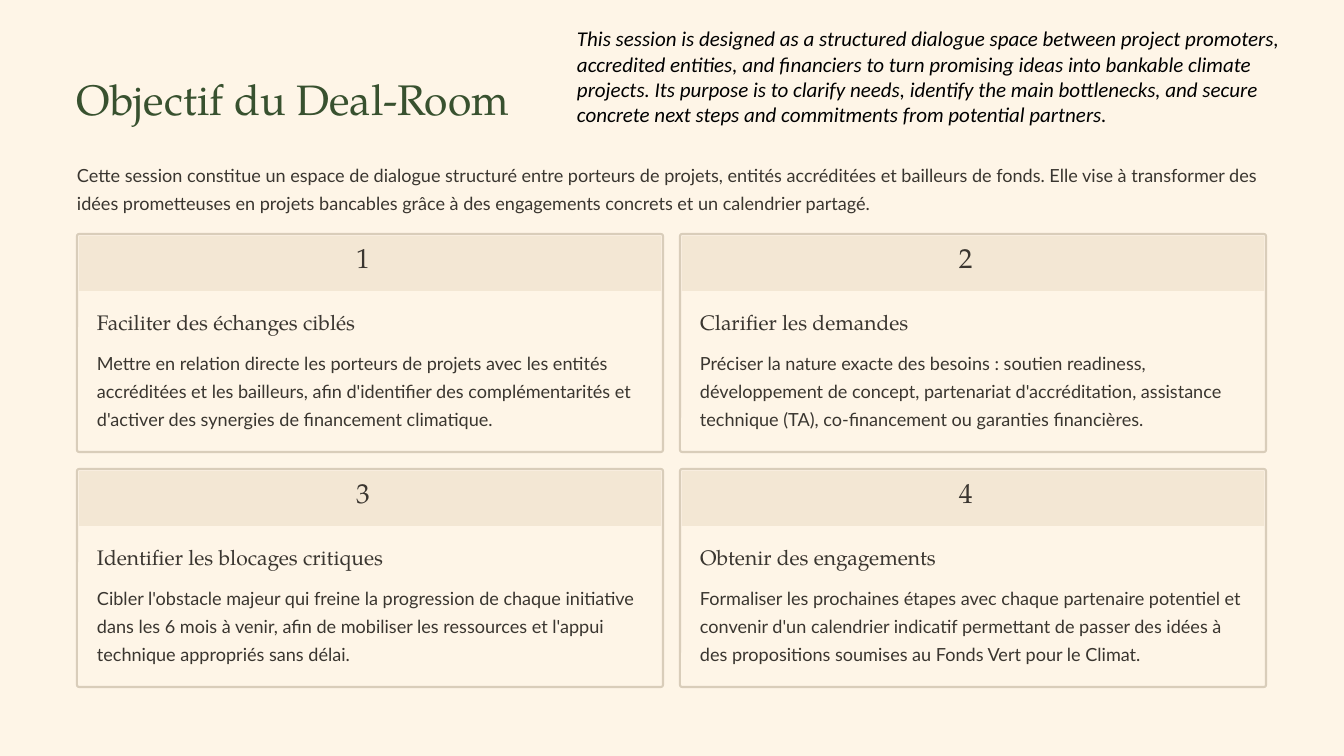
"""Build the slide that presents the aims of the Deal-Room."""
from dataclasses import dataclass

from pptx import Presentation, util as u
from pptx.dml.color import RGBColor
from pptx.enum import shapes, text

TITLE = "Objectif du Deal‑Room"
NOTE = (
    "This session is designed as a structured dialogue space between project promoters, "
    "accredited entities, and financiers to turn promising ideas into bankable climate "
    "projects. Its purpose is to clarify needs, identify the main bottlenecks, and secure "
    "concrete next steps and commitments from potential partners."
)
INTRO = (
    "Cette session constitue un espace de dialogue structuré entre porteurs de projets, "
    "entités accréditées et bailleurs de fonds. Elle vise à transformer des idées "
    "prometteuses en projets bancables grâce à des engagements concrets et un calendrier partagé."
)
CARDS = [
    ("Faciliter des échanges ciblés",
     "Mettre en relation directe les porteurs de projets avec les entités accréditées et les "
     "bailleurs, afin d'identifier des complémentarités et d'activer des synergies de "
     "financement climatique."),
    ("Clarifier les demandes",
     "Préciser la nature exacte des besoins : soutien readiness, développement de concept, "
     "partenariat d'accréditation, assistance technique (TA), co-financement ou garanties "
     "financières."),
    ("Identifier les blocages critiques",
     "Cibler l'obstacle majeur qui freine la progression de chaque initiative dans les 6 mois "
     "à venir, afin de mobiliser les ressources et l'appui technique appropriés sans délai."),
    ("Obtenir des engagements",
     "Formaliser les prochaines étapes avec chaque partenaire potentiel et convenir d'un "
     "calendrier indicatif permettant de passer des idées à des propositions soumises au "
     "Fonds Vert pour le Climat."),
]


@dataclass(frozen=True)
class Style:
    """Font, size, colour, line spacing in points and slant of a text."""
    font: str
    size: float
    color: str
    leading: float = 0
    italic: bool = False


class Theme:
    """Colours and type styles of the slide."""
    paper, band, border = "FEF5E7", "F3E7D4", "D9CDBA"
    ink = "3A3630"
    serif = "TeX Gyre Pagella"
    title = Style(serif, 36.5, "38512F", 46)
    number = Style(serif, 23.5, ink, 23.5)
    heading = Style(serif, 18, ink, 23)
    body = Style("Lato", 15.5, ink, 24)
    note = Style("Calibri", 18, "000000", italic=True)


PX = u.Inches(1) / 84
LEFT, TOP = 77, 234
CARD_W, CARD_H = 586, 218
GAP = 17
COLUMNS = 2


def px(*lengths):
    return [u.Emu(round(n * PX)) for n in lengths]


def add_text(s, box, content, style, wrap=True, inset=(0, 0)):
    tf = s.shapes.add_textbox(*px(*box)).text_frame
    tf.word_wrap = wrap
    tf.auto_size = text.MSO_AUTO_SIZE.NONE
    tf.margin_left, tf.margin_top = tf.margin_right, tf.margin_bottom = px(*inset)
    tf.text = content
    p = tf.paragraphs[0]
    if style.leading:
        p.line_spacing = u.Pt(style.leading)
    font = p.runs[0].font
    font.name, font.size, font.italic = style.font, u.Pt(style.size), style.italic
    font.color.rgb = RGBColor.from_string(style.color)


def add_panel(s, box, fill, radius, border=None):
    sp = s.shapes.add_shape(shapes.MSO_SHAPE.ROUNDED_RECTANGLE, *px(*box))
    sp.shadow.inherit = False
    sp.adjustments[0] = radius
    sp.fill.solid()
    sp.fill.fore_color.rgb = RGBColor.from_string(fill)
    if border:
        sp.line.color.rgb = RGBColor.from_string(border)
        sp.line.width = u.Pt(1.8)
    else:
        sp.line.fill.background()


def add_card(s, index, heading, body):
    row, col = divmod(index, COLUMNS)
    x, y = LEFT + col * (CARD_W + GAP), TOP + row * (CARD_H + GAP)
    add_panel(s, (x, y, CARD_W, CARD_H), Theme.paper, 0.01, Theme.border)
    add_panel(s, (x + 2, y + 2, CARD_W - 4, 55), Theme.band, 0)
    add_text(s, (x + 279, y + 13, 28, 34), str(index + 1), Theme.number, wrap=False)
    add_text(s, (x + 20, y + 74, 313, 27), heading, Theme.heading, wrap=False)
    add_text(s, (x + 20, y + 112, CARD_W - 40, 86), body, Theme.body)


def main():
    prs = Presentation()
    prs.slide_width, prs.slide_height = u.Inches(16), u.Inches(9)
    s = prs.slides.add_slide(prs.slide_layouts[6])
    s.background.fill.solid()
    s.background.fill.fore_color.rgb = RGBColor.from_string(Theme.paper)
    add_text(s, (LEFT, 70, 459, 54), TITLE, Theme.title, wrap=False)
    add_text(s, (LEFT, 158, 1190, 57), INTRO, Theme.body)
    for index, card in enumerate(CARDS):
        add_card(s, index, *card)
    add_text(s, (569, 22, 737, 113), NOTE, Theme.note, inset=(8, 4))
    prs.save("out.pptx")


if __name__ == "__main__":
    main()
